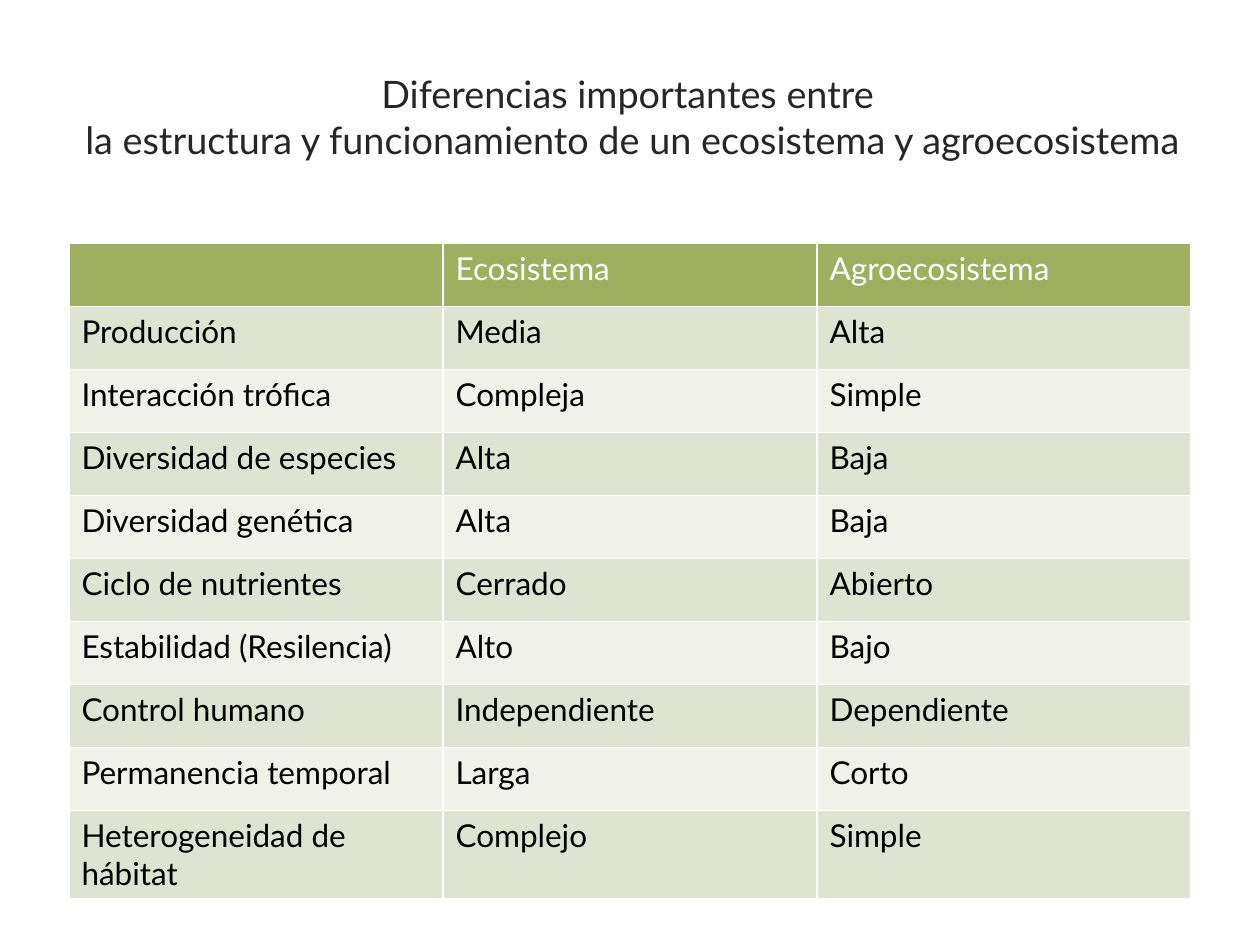
import pptx
import pptx.dml.color
import pptx.enum.text
import pptx.oxml.ns
import pptx.util
import lxml.etree
from dataclasses import dataclass

Cm = pptx.util.Cm

TITLE = (
    "Diferencias importantes entre \v"
    "la estructura y funcionamiento de un ecosistema y agroecosistema"
)
ROWS = [
    ("", "Ecosistema", "Agroecosistema"),
    ("Producción", "Media", "Alta"),
    ("Interacción trófica", "Compleja", "Simple"),
    ("Diversidad de especies", "Alta", "Baja"),
    ("Diversidad genética", "Alta", "Baja"),
    ("Ciclo de nutrientes", "Cerrado", "Abierto"),
    ("Estabilidad (Resilencia)", "Alto", "Bajo"),
    ("Control humano", "Independiente", "Dependiente"),
    ("Permanencia temporal", "Larga", "Corto"),
    ("Heterogeneidad de hábitat", "Complejo", "Simple"),
]


@dataclass(frozen=True)
class Theme:
    font: str = "Lato"
    title_size: float = 21.6
    table_size: float = 18
    border_width: float = 1
    title_color: str = "262626"
    header_color: str = "FFFFFF"
    body_color: str = "000000"
    border_color: str = "FFFFFF"
    header_fill: str = "9EB060"
    band_fills: tuple = ("F0F2EA", "DFE4D2")


THEME = Theme()
COLUMN_WIDTH = Cm(7.54)
ROW_HEIGHT = Cm(1.27)


def rgb(color):
    return pptx.dml.color.RGBColor.from_string(color)


def format_runs(paragraph, size, color):
    for run in paragraph.runs:
        run.font.name = THEME.font
        run.font.size = pptx.util.Pt(size)
        run.font.color.rgb = rgb(color)


def add_borders(cell):
    qn = pptx.oxml.ns.qn
    properties = cell._tc.get_or_add_tcPr()
    for side in ("a:lnL", "a:lnR", "a:lnT", "a:lnB"):
        line = lxml.etree.SubElement(properties, qn(side))
        line.set("w", str(pptx.util.Pt(THEME.border_width)))
        fill = lxml.etree.SubElement(line, qn("a:solidFill"))
        lxml.etree.SubElement(fill, qn("a:srgbClr")).set("val", THEME.border_color)


def add_title(slide):
    shape = slide.shapes.add_textbox(Cm(1.32), Cm(0.76), Cm(22.86), Cm(3.18))
    text_frame = shape.text_frame
    text_frame.word_wrap = True
    text_frame.vertical_anchor = pptx.enum.text.MSO_ANCHOR.MIDDLE
    paragraph = text_frame.paragraphs[0]
    paragraph.text = TITLE
    paragraph.alignment = pptx.enum.text.PP_ALIGN.CENTER
    format_runs(paragraph, THEME.title_size, THEME.title_color)


def add_comparison_table(slide):
    row_count, column_count = len(ROWS), len(ROWS[0])
    table = slide.shapes.add_table(
        row_count, column_count, Cm(1.39), Cm(4.91),
        COLUMN_WIDTH * column_count, ROW_HEIGHT * row_count,
    ).table
    for column in table.columns:
        column.width = COLUMN_WIDTH
    for row_index, texts in enumerate(ROWS):
        table.rows[row_index].height = ROW_HEIGHT
        is_header = row_index == 0
        fill_color = THEME.header_fill if is_header else THEME.band_fills[row_index % 2]
        text_color = THEME.header_color if is_header else THEME.body_color
        for column_index, text in enumerate(texts):
            cell = table.cell(row_index, column_index)
            add_borders(cell)
            cell.fill.solid()
            cell.fill.fore_color.rgb = rgb(fill_color)
            if text:
                paragraph = cell.text_frame.paragraphs[0]
                paragraph.text = text
                format_runs(paragraph, THEME.table_size, text_color)
                for run in paragraph.runs:
                    run.font.bold = False


def main():
    presentation = pptx.Presentation()
    presentation.slide_width = Cm(25.4)
    presentation.slide_height = Cm(19.05)
    slide = presentation.slides.add_slide(presentation.slide_layouts[6])
    add_title(slide)
    add_comparison_table(slide)
    presentation.save("out.pptx")


if __name__ == "__main__":
    main()
